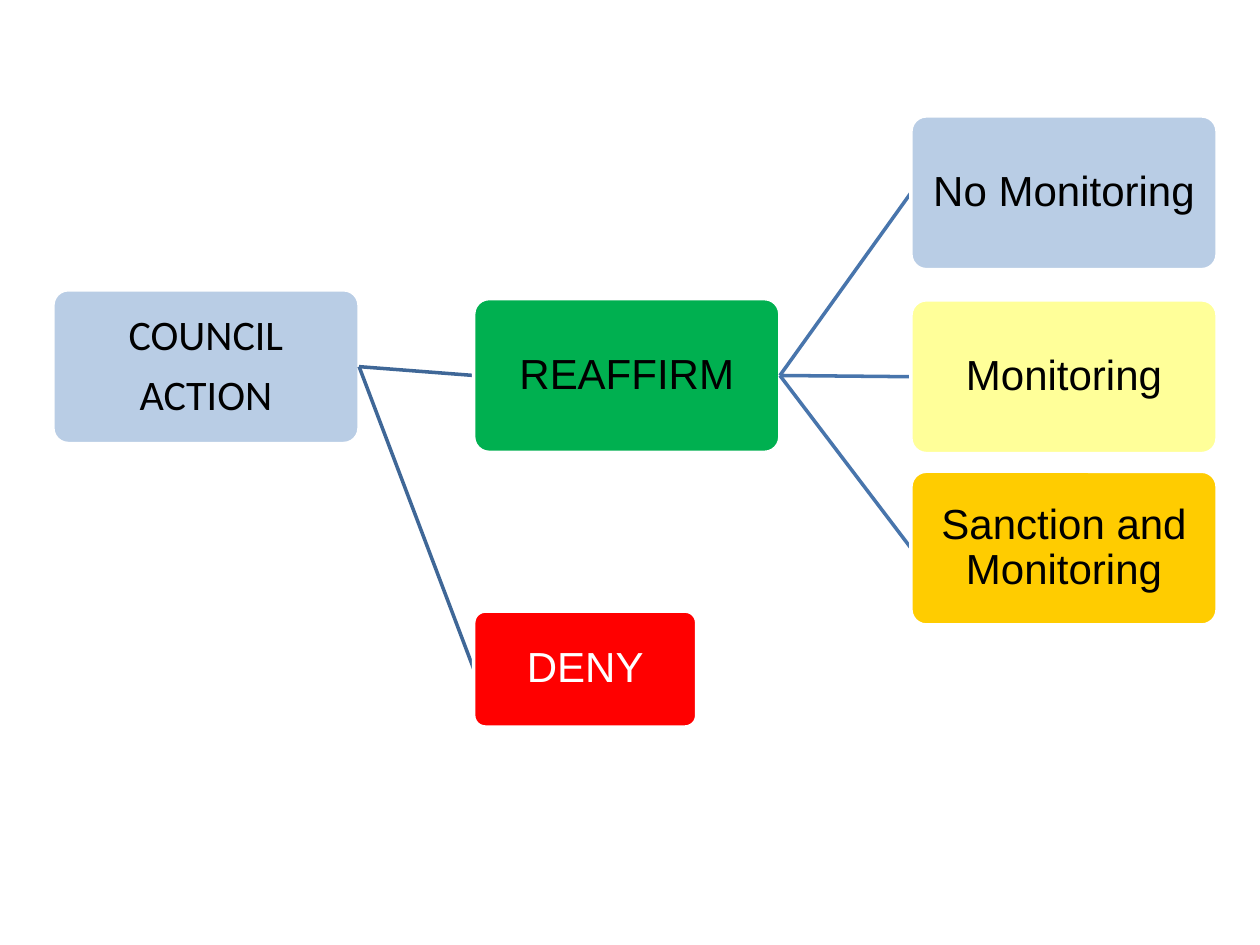
import pptx
import pptx.dml.color
import pptx.enum.shapes
import pptx.enum.text
import pptx.oxml.ns
import pptx.util
from lxml import etree
from pptx.dml.color import RGBColor
from pptx.util import Inches, Pt

BLACK = RGBColor(0x00, 0x00, 0x00)
WHITE = RGBColor(0xFF, 0xFF, 0xFF)
PALE_BLUE = RGBColor(0xB9, 0xCD, 0xE5)
GREEN = RGBColor(0x00, 0xB0, 0x50)
RED = RGBColor(0xFF, 0x00, 0x00)
YELLOW = RGBColor(0xFF, 0xFF, 0x99)
GOLD = RGBColor(0xFF, 0xCC, 0x00)
FIRST_LINK = RGBColor(0x3F, 0x67, 0x97)
SECOND_LINK = RGBColor(0x48, 0x75, 0xAC)

LEFT_SIDE, RIGHT_SIDE = 1, 3
BOX_SIZE = (2.43, 1.22)
SMALL_SIZE = (1.77, 0.92)
ACTION_LEFT, DECISION_LEFT, FOLLOW_UP_LEFT = 0.42, 3.76, 7.23


class DecisionTree:
    def __init__(self, page):
        self.page = page
        self.line_width = Pt(2)
        self.font_size = Pt(24)
        self.inset = Inches(0.05)

    def box(self, text, left, top, fill, size=BOX_SIZE, color=BLACK, font="Arial"):
        box = self.page.shapes.add_shape(
            pptx.enum.shapes.MSO_SHAPE.ROUNDED_RECTANGLE,
            Inches(left), Inches(top), Inches(size[0]), Inches(size[1]))
        box.adjustments[0] = 0.1
        box.shadow.inherit = False
        box.fill.solid()
        box.fill.fore_color.rgb = fill
        box.line.color.rgb = WHITE
        box.line.width = self.line_width
        frame = box.text_frame
        frame.word_wrap = True
        frame.vertical_anchor = pptx.enum.text.MSO_ANCHOR.MIDDLE
        frame.margin_left = frame.margin_right = self.inset
        frame.margin_top = frame.margin_bottom = self.inset
        frame.text = text
        for para in frame.paragraphs:
            para.alignment = pptx.enum.text.PP_ALIGN.CENTER
            para.line_spacing = 0.9
            para.space_after = Pt(8.4)
            para.font.name = font
            para.font.size = self.font_size
            para.font.color.rgb = color
        return box

    def link(self, color):
        link = self.page.shapes.add_connector(
            pptx.enum.shapes.MSO_CONNECTOR.STRAIGHT, 0, 0, 0, 0)
        link.line.color.rgb = color
        link.line.width = self.line_width
        etree.SubElement(link._element.spPr, pptx.oxml.ns.qn("a:effectLst"))
        return link

    def branch(self, parent, link_color, *box_args, **box_style):
        link = self.link(link_color)
        child = self.box(*box_args, **box_style)
        link.begin_connect(parent, RIGHT_SIDE)
        link.end_connect(child, LEFT_SIDE)
        return child


def main():
    deck = pptx.Presentation()
    deck.slide_width, deck.slide_height = Inches(10), Inches(7.5)
    tree = DecisionTree(deck.slides.add_slide(deck.slide_layouts[6]))

    action = tree.box("COUNCIL\nACTION", ACTION_LEFT, 2.3, PALE_BLUE, font="Calibri")
    reaffirm = tree.branch(action, FIRST_LINK, "REAFFIRM", DECISION_LEFT, 2.37, GREEN)
    for text, top, fill in (
        ("No Monitoring", 0.92, PALE_BLUE),
        ("Monitoring", 2.38, YELLOW),
        ("Sanction and Monitoring", 3.74, GOLD),
    ):
        tree.branch(reaffirm, SECOND_LINK, text, FOLLOW_UP_LEFT, top, fill)
    tree.branch(action, FIRST_LINK, "DENY", DECISION_LEFT, 4.85, RED,
                size=SMALL_SIZE, color=WHITE)

    deck.save("out.pptx")


if __name__ == "__main__":
    main()
